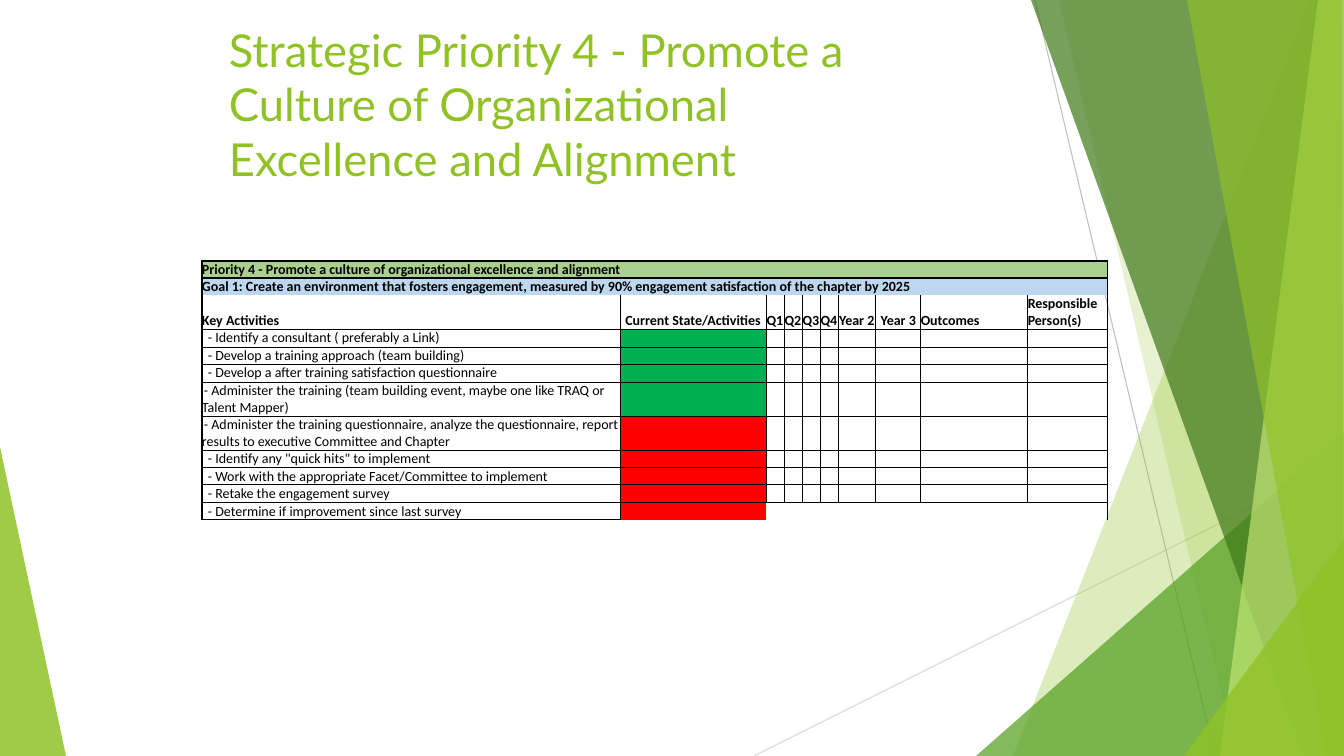
import pptx
import pptx.dml.color
import pptx.enum.shapes
import pptx.enum.text
import pptx.oxml.ns
import pptx.util
import lxml.etree
from dataclasses import dataclass

PX = 914400 / 100.8
ANCHOR = pptx.enum.text.MSO_ANCHOR
ALIGN = pptx.enum.text.PP_ALIGN
qn = pptx.oxml.ns.qn
rgb = pptx.dml.color.RGBColor.from_string


@dataclass(frozen=True)
class Theme:
    lime: str = "90C226"
    leaf: str = "54A021"
    forest: str = "3F7819"
    pale: str = "C0E474"
    ink: str = "000000"
    priority: str = "A9D08E"
    goal: str = "BDD7EE"
    done: str = "00B050"
    pending: str = "FF0000"
    light_line: str = "D9D9D9"
    mid_line: str = "BFBFBF"
    title_font: str = "Lato"
    table_font: str = "Calibri"
    title_size: float = 32.4
    table_size: float = 10
    thin: float = 0.5
    thick: float = 1


theme = Theme()


def px(count):
    return pptx.util.Emu(round(count * PX))


def write(frame, text, font=theme.table_font, size=theme.table_size, color=theme.ink,
          bold=False, align=ALIGN.LEFT, indent=0):
    """Fill the frame's first paragraph; indent is for its first line, in px."""
    paragraph = frame.paragraphs[0]
    paragraph.alignment = align
    if indent:
        paragraph._p.get_or_add_pPr().set("indent", str(px(indent)))
    if text:
        run = paragraph.add_run()
        run.text = text
        run.font.name, run.font.size, run.font.bold = font, pptx.util.Pt(size), bold
        run.font.color.rgb = rgb(color)
    # The end mark keeps empty cells as low as the filled ones.
    lxml.etree.SubElement(paragraph._p, qn("a:endParaRPr"), sz=str(round(size * 100)))


deck = pptx.Presentation()
deck.slide_width, deck.slide_height = px(1344), px(756)
slide = deck.slides.add_slide(deck.slide_layouts[6])

# Backdrop: facets and two fine lines, from back to front
backdrop = [
    ("facet", theme.lime, 85, [(0, 447), (66, 756), (0, 756)]),
    ("line", theme.light_line, 100, [(754, 756), (1344, 461)]),
    ("line", theme.mid_line, 100, [(1035, 0), (1215, 756)]),
    ("facet", theme.lime, 30, [(1310, 0), (1013, 756), (1344, 756), (1344, 0)]),
    ("facet", theme.lime, 20, [(1059, 0), (1236, 756), (1344, 756), (1344, 0)]),
    ("facet", theme.leaf, 72, [(976, 756), (1344, 432), (1344, 756)]),
    ("facet", theme.forest, 70, [(1031, 0), (1303, 756), (1344, 756), (1344, 0)]),
    ("facet", theme.pale, 70, [(1318, 0), (1220, 756), (1344, 756), (1344, 0)]),
    ("facet", theme.lime, 65, [(1187, 0), (1326, 756), (1344, 756), (1342, 0)]),
    ("facet", theme.lime, 80, [(1184, 756), (1344, 539), (1344, 756)]),
]
for kind, color, opacity, points in backdrop:
    if kind == "line":
        (x1, y1), (x2, y2) = points
        ray = slide.shapes.add_connector(
            pptx.enum.shapes.MSO_CONNECTOR.STRAIGHT, px(x1), px(y1), px(x2), px(y2))
        ray.line.color.rgb = rgb(color)
        ray.line.width = pptx.util.Pt(0.75)
        lxml.etree.SubElement(ray._element.spPr, qn("a:effectLst"))
    else:
        outline = slide.shapes.build_freeform(*points[0], scale=PX)
        outline.add_line_segments(points[1:], close=True)
        facet = outline.convert_to_shape()
        facet.shadow.inherit = False
        facet.line.fill.background()
        facet.fill.solid()
        facet.fill.fore_color.rgb = rgb(color)
        tint = facet._element.spPr.find(".//" + qn("a:srgbClr"))
        lxml.etree.SubElement(tint, qn("a:alpha"), val=str(opacity * 1000))

title = slide.shapes.add_textbox(px(219), px(17), px(730), px(184)).text_frame
title.word_wrap = True
title.vertical_anchor = ANCHOR.TOP
write(title, "Strategic Priority 4 - Promote a Culture of Organizational Excellence and Alignment",
      font=theme.title_font, size=theme.title_size, color=theme.lime)

# Priority table
banners = [
    ("Priority 4 - Promote a culture of organizational excellence and alignment", theme.priority),
    ("Goal 1: Create an environment that fosters engagement, measured by 90% engagement "
     "satisfaction of the chapter by 2025", theme.goal),
]
headings = ["Key Activities", "Current State/Activities", "Q1", "Q2", "Q3", "Q4",
            "Year 2", "Year 3", "Outcomes", "Responsible Person(s)"]
left_headings = ("Key Activities", "Outcomes", "Responsible Person(s)")
activities = [  # text, first-line indent, state
    ("- Identify a consultant ( preferably a Link)", 6, theme.done),
    ("- Develop a training approach (team building)", 6, theme.done),
    ("- Develop a after training satisfaction questionnaire", 6, theme.done),
    ("- Administer the training (team building event, maybe one like TRAQ or Talent Mapper)",
     2, theme.done),
    ("- Administer the training questionnaire, analyze the questionnaire, report results to "
     "executive Committee and Chapter", 2, theme.pending),
    ('- Identify any "quick hits" to implement', 6, theme.pending),
    ("- Work with the appropriate Facet/Committee to implement", 6, theme.pending),
    ("- Retake the engagement survey", 6, theme.pending),
    ("- Determine if improvement since last survey", 6, theme.pending),
]
widths = [418, 146, 18, 18, 18, 18, 38, 45, 107, 80]
heights = [17, 17, 34, 18, 17, 18, 34, 34, 18, 17, 18, 17]
last_row, last_col = len(heights) - 1, len(widths) - 1
header_row = len(banners)

table = slide.shapes.add_table(len(heights), len(widths), px(202), px(261),
                               px(sum(widths)), px(sum(heights))).table
table.first_row = table.horz_banding = False
for column, width in zip(table.columns, widths):
    column.width = px(width)
for row, height in zip(table.rows, heights):
    row.height = px(height)
for r in range(header_row):
    table.cell(r, 0).merge(table.cell(r, last_col))

for r in range(len(heights)):
    for c in range(len(widths)):
        cell = table.cell(r, c)
        cell.margin_left = cell.margin_right = cell.margin_top = cell.margin_bottom = 0
        cell.vertical_anchor = ANCHOR.TOP
        text, fill, style = "", None, {}
        if r < header_row:
            cell.vertical_anchor = ANCHOR.MIDDLE if r == 0 else ANCHOR.BOTTOM
            banner, fill = banners[r]
            text, style = (banner if c == 0 else ""), {"bold": True}
        elif r == header_row:
            cell.vertical_anchor = ANCHOR.BOTTOM
            text = headings[c]
            style = {"bold": True, "align": ALIGN.LEFT if text in left_headings else ALIGN.CENTER}
        else:
            activity, indent, state = activities[r - header_row - 1]
            if c == 0:
                text, style = activity, {"indent": indent}
            elif c == 1:
                fill = state
        write(cell.text_frame, text, **style)

        edge = theme.thick if r < header_row else theme.thin
        borders = {"L": theme.thick if c == 0 else theme.thin,
                   "R": theme.thick if c == last_col or r < header_row else theme.thin,
                   "T": edge, "B": edge}
        if r == header_row - 1:
            borders["B"] = 0
        if r == header_row:
            borders["T"] = 0
        if r == last_row and c > 0:
            borders["B"] = 0
            borders["L"] = theme.thin if c == 1 else 0
            borders["R"] = theme.thick if c == last_col else 0
        properties = cell._tc.get_or_add_tcPr()
        for side, weight in borders.items():
            border = lxml.etree.SubElement(properties, qn("a:ln" + side), w=str(round(weight * 12700)))
            if weight:
                paint = lxml.etree.SubElement(border, qn("a:solidFill"))
                lxml.etree.SubElement(paint, qn("a:srgbClr"), val=theme.ink)
            else:
                lxml.etree.SubElement(border, qn("a:noFill"))
        if fill:
            cell.fill.solid()
            cell.fill.fore_color.rgb = rgb(fill)
        else:
            cell.fill.background()

deck.save("out.pptx")
